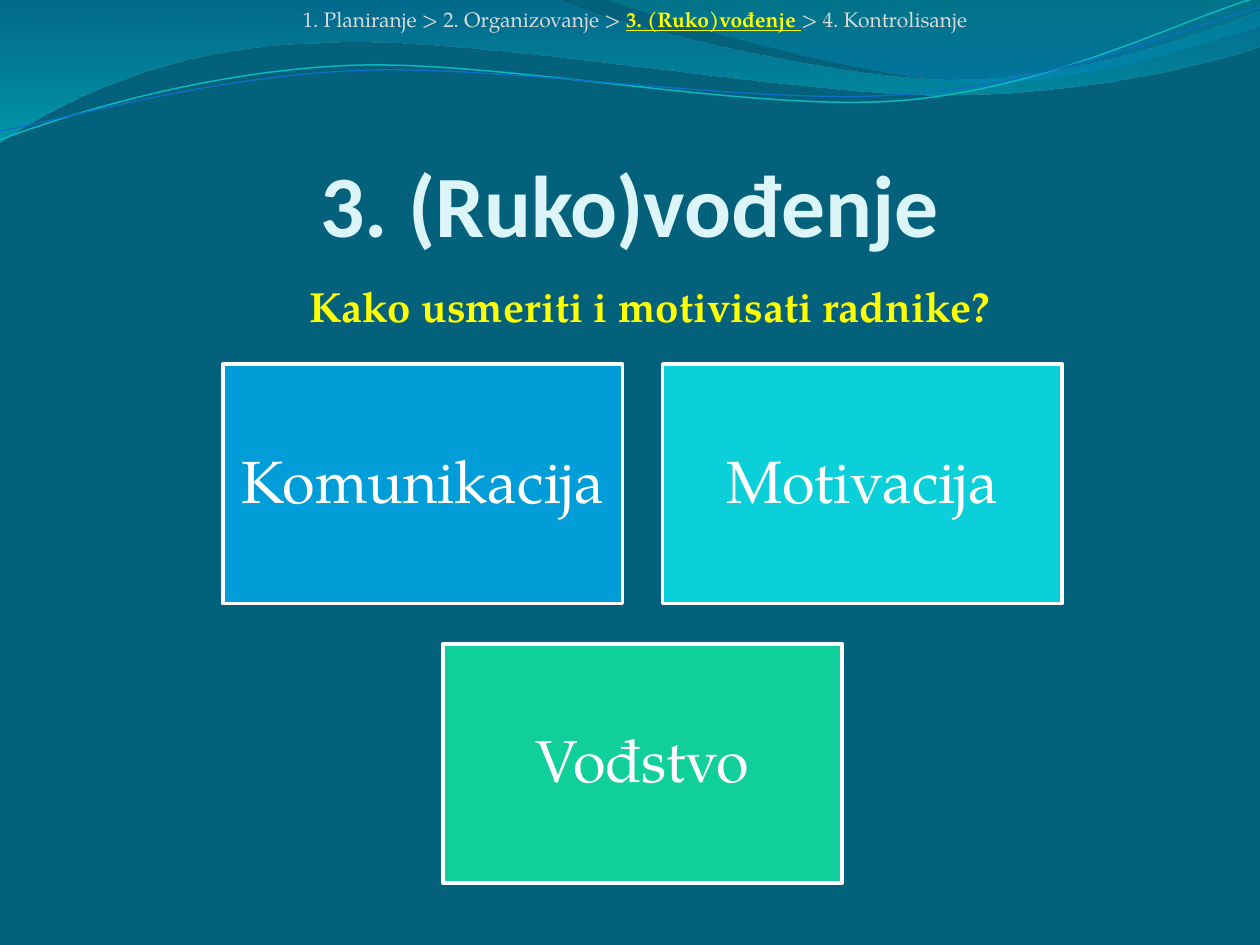
"""Build a slide on leading: a wavy header, a title and three topic boxes."""
from lxml import etree
from pptx import Presentation
from pptx import util as u
from pptx.dml.color import RGBColor
from pptx.enum import shapes, text
from pptx.oxml.ns import qn

THEME = {
    "back": "04617B", "pale": "DBF5F9", "grey": "D9D9D9", "hot": "FFFF00", "white": "FFFFFF",
    "body": "TeX Gyre Pagella", "head": "Calibri",
    "small": 12, "lead": 24, "box": 34, "title": 50,
}
STEPS = [("1. Planiranje > 2. Organizovanje > ", False), ("3. (Ruko)vođenje ", True),
         ("> 4. Kontrolisanje", False)]
TITLE = "3. (Ruko)vođenje"
LEAD = "Kako usmeriti i motivisati radnike?"
ROWS = [[("Komunikacija", "009DD9"), ("Motivacija", "0BD0D9")], [("Vođstvo", "10CF9B")]]
MID, TOP, WIDE, HIGH, GAP = 5.1, 2.89, 3.17, 1.9, 0.32

BANDS = [
    ([(0, 0), (4.4, -0.01), (4.76, 0.17, 6.64, 0.63, 7.58, 0.63),
      (8.53, 0.63, 9.58, 0.26, 10, 0.09), (10.01, 0.36),
      (9.83, 0.44, 8.7, 0.76, 7.46, 0.75), (6.22, 0.75, 3.82, 0.28, 2.57, 0.34),
      (1.29, 0.36, 0.46, 0.83, -0.01, 1.13)],
     [(0, "0074A1", 45), (1, "00C6CF", 55)]),
    ([(4.79, -0.01), (5.09, 0.11, 6.82, 0.62, 7.69, 0.65),
      (8.56, 0.69, 9.61, 0.32, 10, 0.21), (10, 0)],
     [(0, "00A1A9", 30), (0.8, "008BBF", 45)]),
]
WAVES = [
    ([(0, 1.11), (0.48, 0.93, 1.58, 0.57, 2.77, 0.52),
      (3.95, 0.47, 5.93, 0.89, 7.13, 0.8), (8.33, 0.71, 9.38, 0.15, 9.98, -0.02)],
     "0AB8BF", 0.85),
    ([(0, 1.04), (0.47, 0.96, 1.64, 0.61, 2.83, 0.56),
      (4.03, 0.51, 5.97, 0.84, 7.17, 0.75), (8.36, 0.67, 9.41, 0.21, 10, 0.06)],
     "0F6FC6", 0.75),
]


def rgb(name):
    return RGBColor.from_string(THEME.get(name, name))


def curve(slide, parts, close):
    ends = [tuple(map(u.Inches, part[-2:])) for part in parts]
    pen = slide.shapes.build_freeform(*ends[0])
    pen.add_line_segments(ends[1:], close=close)
    shape = pen.convert_to_shape()
    shape.shadow.inherit = False
    lines = list(shape.element.spPr.iter(qn("a:lnTo")))
    for node, part in zip(lines, parts[1:]):
        if len(part) == 6:
            bend(node, part, shape.left, shape.top)
    return shape


def bend(node, part, left, top):
    cubic = etree.Element(qn("a:cubicBezTo"))
    for x, y in zip(part[::2], part[1::2]):
        spot = etree.SubElement(cubic, qn("a:pt"))
        spot.set("x", str(u.Inches(x) - left))
        spot.set("y", str(u.Inches(y) - top))
    node.getparent().replace(node, cubic)


def band(slide, parts, stops):
    shape = curve(slide, parts, True)
    shape.line.fill.background()
    shape.fill.gradient()
    shape.fill.gradient_angle = 270
    for stop, (pos, tint, _) in zip(shape.fill.gradient_stops, stops):
        stop.position = pos
        stop.color.rgb = rgb(tint)
    tints = list(shape.element.spPr.iter(qn("a:srgbClr")))
    for node, (_, _, alpha) in zip(tints, stops):
        etree.SubElement(node, qn("a:alpha")).set("val", str(alpha * 1000))


def wave(slide, parts, tint, width):
    shape = curve(slide, parts, False)
    shape.fill.background()
    shape.line.color.rgb = rgb(tint)
    shape.line.width = u.Pt(width)


def style(run, size, tint, face="body", bold=False):
    font = run.font
    font.name, font.size, font.bold = THEME[face], u.Pt(THEME[size]), bold
    font.color.rgb = rgb(tint)


def label(slide, area, runs):
    frame = slide.shapes.add_textbox(*map(u.Inches, area)).text_frame
    frame.word_wrap = True
    para = frame.paragraphs[0]
    para.alignment = text.PP_ALIGN.CENTER
    for words, look in runs:
        run = para.add_run()
        run.text = words
        style(run, **look)
    return frame


def box(slide, left, top, words, tint):
    area = map(u.Inches, (left, top, WIDE, HIGH))
    shape = slide.shapes.add_shape(shapes.MSO_SHAPE.RECTANGLE, *area)
    shape.shadow.inherit = False
    shape.fill.solid()
    shape.fill.fore_color.rgb = rgb(tint)
    shape.line.color.rgb = rgb("white")
    shape.line.width = u.Pt(2)
    frame = shape.text_frame
    frame.text = words
    frame.word_wrap = True
    frame.vertical_anchor = text.MSO_ANCHOR.MIDDLE
    for side in ("left", "right", "top", "bottom"):
        setattr(frame, "margin_" + side, u.Inches(0.14))
    para = frame.paragraphs[0]
    para.alignment = text.PP_ALIGN.CENTER
    para.line_spacing = 0.9
    style(para.runs[0], "box", "white")


def main():
    deck = Presentation()
    deck.slide_width, deck.slide_height = u.Inches(10), u.Inches(7.5)
    slide = deck.slides.add_slide(deck.slide_layouts[6])
    slide.background.fill.solid()
    slide.background.fill.fore_color.rgb = rgb("back")
    for item in BANDS:
        band(slide, *item)
    for item in WAVES:
        wave(slide, *item)

    trail = [(words, {"size": "small", "tint": "hot" if now else "grey", "bold": now})
             for words, now in STEPS]
    frame = label(slide, (0.04, 0, 10, 0.3), trail)
    for run, (_, now) in zip(frame.paragraphs[0].runs, STEPS):
        run.font.underline = now
    look = {"size": "title", "tint": "pale", "face": "head", "bold": True}
    frame = label(slide, (0.5, 0.77, 9, 1.25), [(TITLE, look)])
    frame.vertical_anchor = text.MSO_ANCHOR.BOTTOM
    frame.margin_left = frame.margin_right = frame.margin_bottom = 0
    label(slide, (0.51, 2.18, 9.29, 0.5), [(LEAD, {"size": "lead", "tint": "hot", "bold": True})])

    for r, row in enumerate(ROWS):
        left = MID - (len(row) * (WIDE + GAP) - GAP) / 2
        for c, (words, tint) in enumerate(row):
            box(slide, left + c * (WIDE + GAP), TOP + r * (HIGH + GAP), words, tint)
    deck.save("out.pptx")


if __name__ == "__main__":
    main()
